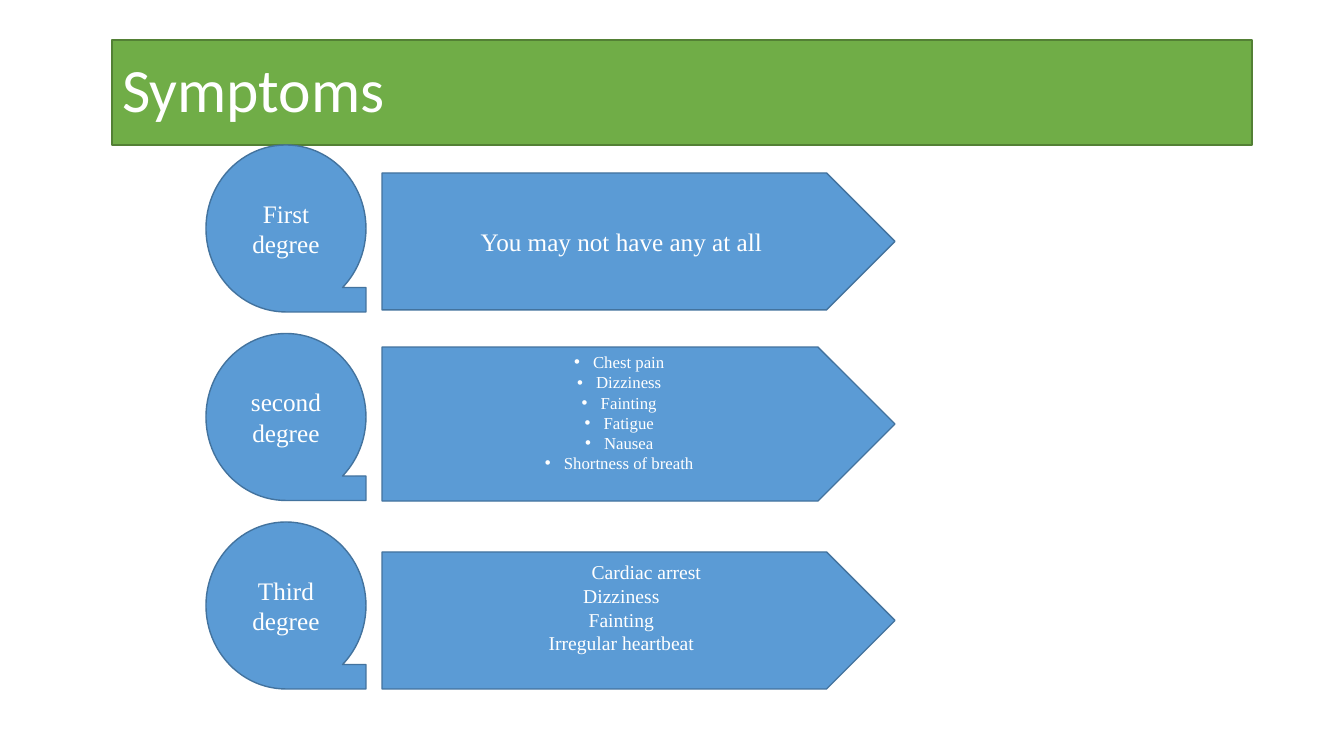
"""Builds the slide listing symptoms for each degree."""
from dataclasses import dataclass

from lxml import etree
from pptx import Presentation, util as u
from pptx.dml.color import RGBColor
from pptx.enum import shapes, text
from pptx.oxml.ns import qn

TITLE = "Symptoms"
DEGREES = [
    dict(label=["First degree"], symptoms=["You may not have any at all"],
         size=18, top=173, height=137),
    dict(label=["second degree"],
         symptoms=["Chest pain", "Dizziness", "Fainting", "Fatigue", "Nausea", "Shortness of breath"],
         size=12, top=347, height=154, lift=23, bulleted=True),
    dict(label=["Third", "degree"],
         symptoms=["Cardiac arrest", "Dizziness", "Fainting", "Irregular heartbeat"],
         size=14, top=552, height=137, lift=26, first_indent=50),
]


@dataclass(frozen=True)
class Theme:
    white: str = "FFFFFF"
    green: str = "70AD47"
    green_line: str = "538035"
    blue: str = "5B9BD5"
    blue_line: str = "43739E"
    title_font: str = "Calibri"
    body_font: str = "Times New Roman"
    title_size: int = 44
    label_size: int = 18


THEME = Theme()
SLIDE_SIZE = (1344, 756)
TITLE_BOX = (112, 40, 1140, 105)
LABEL_LEFT, LABEL_TOP, LABEL_WIDTH, LABEL_HEIGHT = 206, 145, 160, 167
LABEL_PITCH = 188.5
ARROW_LEFT, ARROW_WIDTH = 382, 513
BULLET_INDENT = 19
INSET = 5


def px(length):
    return u.Emu(round(length * 914400 / 100.8))


def paint(shape, fill, line):
    shape.fill.solid()
    shape.fill.fore_color.rgb = RGBColor.from_string(fill)
    shape.line.color.rgb = RGBColor.from_string(line)
    shape.line.width = u.Pt(1)


def write(shape, lines, size, font, align):
    frame = shape.text_frame
    frame.word_wrap = True
    frame.vertical_anchor = text.MSO_ANCHOR.MIDDLE
    frame.text = "\n".join(lines)
    for paragraph in frame.paragraphs:
        paragraph.alignment = align
        paragraph.font.size = u.Pt(size)
        paragraph.font.name = font
        paragraph.font.color.rgb = RGBColor.from_string(THEME.white)
    return frame


def indent(paragraph, left, bulleted=False):
    properties = paragraph._p.get_or_add_pPr()
    properties.set("marL", str(px(left)))
    if bulleted:
        properties.set("indent", str(-px(left)))
        bullet = etree.Element(qn("a:buChar"), char="•")
        properties.insert(0, bullet)
        bullet.addprevious(etree.Element(qn("a:buFont"), typeface="Arial"))


def add_block(slide, kind, box, lines, size):
    shape = slide.shapes.add_shape(kind, *map(px, box))
    shape.shadow.inherit = False
    paint(shape, THEME.blue, THEME.blue_line)
    return write(shape, lines, size, THEME.body_font, text.PP_ALIGN.CENTER)


def add_degree(slide, row, degree):
    label_box = (LABEL_LEFT, LABEL_TOP + row * LABEL_PITCH, LABEL_WIDTH, LABEL_HEIGHT)
    add_block(slide, shapes.MSO_SHAPE.FLOWCHART_SEQUENTIAL_ACCESS_STORAGE,
              label_box, degree["label"], THEME.label_size)
    arrow_box = (ARROW_LEFT, degree["top"], ARROW_WIDTH, degree["height"])
    frame = add_block(slide, shapes.MSO_SHAPE.PENTAGON,
                      arrow_box, degree["symptoms"], degree["size"])
    frame.margin_bottom = px(INSET + degree.get("lift", 0))
    if degree.get("bulleted"):
        for paragraph in frame.paragraphs:
            indent(paragraph, BULLET_INDENT, bulleted=True)
    if "first_indent" in degree:
        indent(frame.paragraphs[0], degree["first_indent"])


def main():
    presentation = Presentation()
    presentation.slide_width, presentation.slide_height = map(px, SLIDE_SIZE)
    slide = presentation.slides.add_slide(presentation.slide_layouts.get_by_name("Title Only"))
    title = slide.shapes.title
    title.left, title.top, title.width, title.height = map(px, TITLE_BOX)
    paint(title, THEME.green, THEME.green_line)
    frame = write(title, [TITLE], THEME.title_size, THEME.title_font, text.PP_ALIGN.LEFT)
    frame.paragraphs[0].line_spacing = 0.9
    for row, degree in enumerate(DEGREES):
        add_degree(slide, row, degree)
    presentation.save("out.pptx")


if __name__ == "__main__":
    main()
